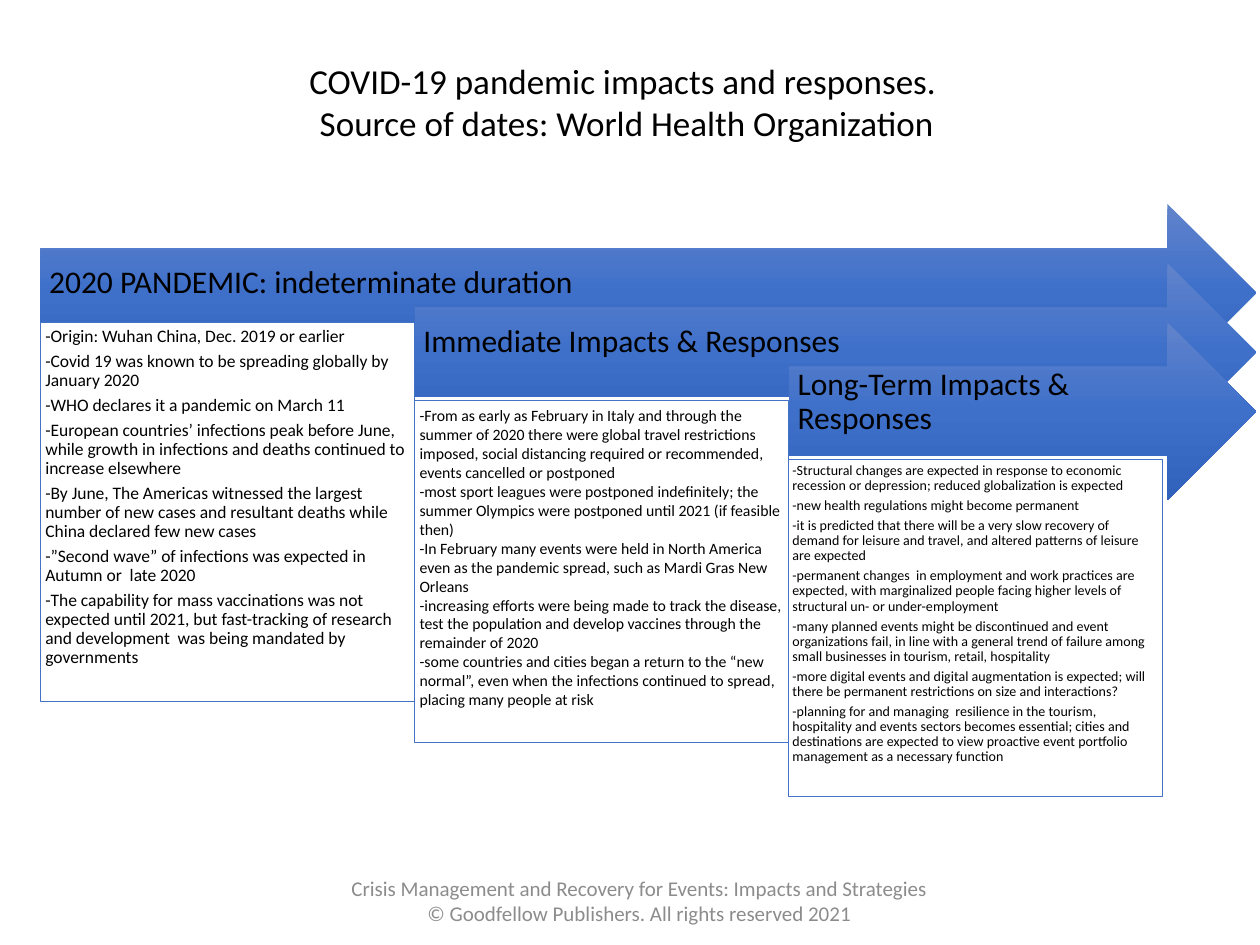
from copy import deepcopy
from dataclasses import dataclass

from pptx import Presentation
from pptx.dml.color import RGBColor
from pptx.enum.shapes import MSO_SHAPE as Shape
from pptx.enum.text import MSO_ANCHOR as Anchor, MSO_AUTO_SIZE as AutoSize, PP_ALIGN as Align
from pptx.oxml.ns import qn
from pptx.util import Inches, Pt


@dataclass(frozen=True)
class Theme:
    """Colours, type sizes and font of the slide."""
    font: str = "Calibri"
    ink: str = "000000"
    muted: str = "8C8C8C"
    paper: str = "FFFFFF"
    outline: str = "4472C4"
    gradient: tuple = ((0, "6183CB"), (0.5, "3E70CA"), (1, "3062BB"))
    title: int = 20
    heading: int = 18
    footer: int = 12


@dataclass(frozen=True)
class Stage:
    """One phase: its heading and the panel of points below it."""
    heading: str
    points: tuple
    top: float
    height: float
    size: int
    inset: float = 0.04
    line_spacing: float = 0.9
    gap: float = 0.35


THEME = Theme()
WIDTH, HEIGHT = 10, 7.5
LEFT, RIGHT, COLUMN = 0.32, 9.97, 2.97
ARROW_TOP, ARROW_HEIGHT, STEP = 1.62, 1.41, 0.47

TITLE = ("COVID-19 pandemic impacts and responses. ",
         "Source of dates: World Health Organization")
FOOTER = ("Crisis Management and Recovery for Events: Impacts and Strategies",
          "© Goodfellow Publishers. All rights reserved 2021")
STAGES = (
    Stage("2020 PANDEMIC: indeterminate duration", (
        "-Origin: Wuhan China, Dec. 2019 or earlier",
        "-Covid 19 was known to be spreading globally by January 2020",
        "-WHO declares it a pandemic on March 11",
        "-European countries’ infections peak before June, while growth in infections "
        "and deaths continued to increase elsewhere",
        "-By June, The Americas witnessed the largest number of new cases and resultant "
        "deaths while China declared few new cases",
        "-”Second wave” of infections was expected in Autumn or  late 2020",
        "-The capability for mass vaccinations was not expected until 2021, but "
        "fast-tracking of research and development  was being mandated by governments",
    ), top=2.56, height=3.01, size=10),
    Stage("Immediate Impacts & Responses", (
        "-From as early as February in Italy and through the summer of 2020 there were "
        "global travel restrictions imposed, social distancing required or recommended, "
        "events cancelled or postponed",
        "-most sport leagues were postponed indefinitely; the summer Olympics were "
        "postponed until 2021 (if feasible then)",
        "-In February many events were held in North America even as the pandemic "
        "spread, such as Mardi Gras New Orleans",
        "-increasing efforts were being made to track the disease, test the population "
        "and develop vaccines through the remainder of 2020",
        "-some countries and cities began a return to the “new normal”, even when the "
        "infections continued to spread, placing many people at risk",
    ), top=3.18, height=2.71, size=9, line_spacing=1, gap=0),
    Stage("Long-Term Impacts & Responses", (
        "-Structural changes are expected in response to economic recession or "
        "depression; reduced globalization is expected",
        "-new health regulations might become permanent",
        "-it is predicted that there will be a very slow recovery of demand for leisure "
        "and travel, and altered patterns of leisure are expected",
        "-permanent changes  in employment and work practices are expected, with "
        "marginalized people facing higher levels of structural un- or under-employment",
        "-many planned events might be discontinued and event organizations fail, in "
        "line with a general trend of failure among small businesses in tourism, "
        "retail, hospitality",
        "-more digital events and digital augmentation is expected; will there be "
        "permanent restrictions on size and interactions?",
        "-planning for and managing  resilience in the tourism, hospitality and events "
        "sectors becomes essential; cities and destinations are expected to view "
        "proactive event portfolio management as a necessary function",
    ), top=3.65, height=2.67, size=8, inset=0.03),
)


def box(left, top, width, height):
    """Return a position and size in slide units."""
    return [Inches(v) for v in (left, top, width, height)]


def write(s, lines, *, size, color=THEME.ink, align=Align.LEFT, anchor=Anchor.TOP,
          insets=(0.1, 0.05, 0.1, 0.05), line_spacing=1, gap=0):
    """Fill a shape with one formatted paragraph per line."""
    tf = s.text_frame
    tf.word_wrap, tf.auto_size, tf.vertical_anchor = True, AutoSize.NONE, anchor
    tf.margin_left, tf.margin_top, tf.margin_right, tf.margin_bottom = map(Inches, insets)
    for i, line in enumerate(lines):
        p = tf.add_paragraph() if i else tf.paragraphs[0]
        p.alignment, p.line_spacing = align, line_spacing
        p.space_before, p.space_after = Pt(0), Pt(size * gap)
        r = p.add_run()
        r.text = line
        r.font.name, r.font.size = THEME.font, Pt(size)
        r.font.color.rgb = RGBColor.from_string(color)


def shade(s, stops):
    """Give a shape a top-to-bottom gradient through the given stops."""
    s.fill.gradient()
    s.fill.gradient_angle = 270
    gs_list = s._element.spPr.find(qn("a:gradFill")).find(qn("a:gsLst"))
    while len(gs_list) < len(stops):
        gs_list.append(deepcopy(gs_list[0]))
    for stop, (position, color) in zip(s.fill.gradient_stops, stops):
        stop.position = position
        stop.color.rgb = RGBColor.from_string(color)


def add_arrow(slide, stage, column):
    """Add the heading arrow that runs from its column to the right edge."""
    left = LEFT + column * COLUMN
    s = slide.shapes.add_shape(Shape.RIGHT_ARROW, *box(
        left, ARROW_TOP + column * STEP, RIGHT - left, ARROW_HEIGHT))
    s.shadow.inherit = False
    shade(s, THEME.gradient)
    s.line.fill.background()
    write(s, [stage.heading], size=THEME.heading, anchor=Anchor.MIDDLE,
          insets=(0.07, 0.07, 0.28, 0.22), line_spacing=0.9, gap=0.35)


def add_panel(slide, stage, column):
    """Add the outlined panel that lists the points of a stage."""
    s = slide.shapes.add_shape(Shape.RECTANGLE, *box(
        LEFT + column * COLUMN, stage.top, COLUMN, stage.height))
    s.shadow.inherit = False
    s.fill.solid()
    s.fill.fore_color.rgb = RGBColor.from_string(THEME.paper)
    s.line.color.rgb = RGBColor.from_string(THEME.outline)
    s.line.width = Pt(0.5)
    write(s, stage.points, size=stage.size, insets=(stage.inset,) * 4,
          line_spacing=stage.line_spacing, gap=stage.gap)


def add_title(slide):
    """Place and fill the title placeholder."""
    s = slide.shapes.title
    s.left, s.top, s.width, s.height = box(0.12, 0.42, 9.71, 0.77)
    write(s, TITLE, size=THEME.title, align=Align.CENTER)


def add_footer(slide):
    """Add the centred footer."""
    s = slide.shapes.add_textbox(*box(0.74, 6.9, 8.67, 0.49))
    write(s, FOOTER, size=THEME.footer, color=THEME.muted, align=Align.CENTER,
          anchor=Anchor.MIDDLE)


def main():
    """Build and save the slide."""
    prs = Presentation()
    prs.slide_width, prs.slide_height = Inches(WIDTH), Inches(HEIGHT)
    slide = prs.slides.add_slide(prs.slide_layouts.get_by_name("Title Only"))
    add_title(slide)
    for column, stage in enumerate(STAGES):
        add_arrow(slide, stage, column)
        add_panel(slide, stage, column)
    add_footer(slide)
    prs.save("out.pptx")


if __name__ == "__main__":
    main()
